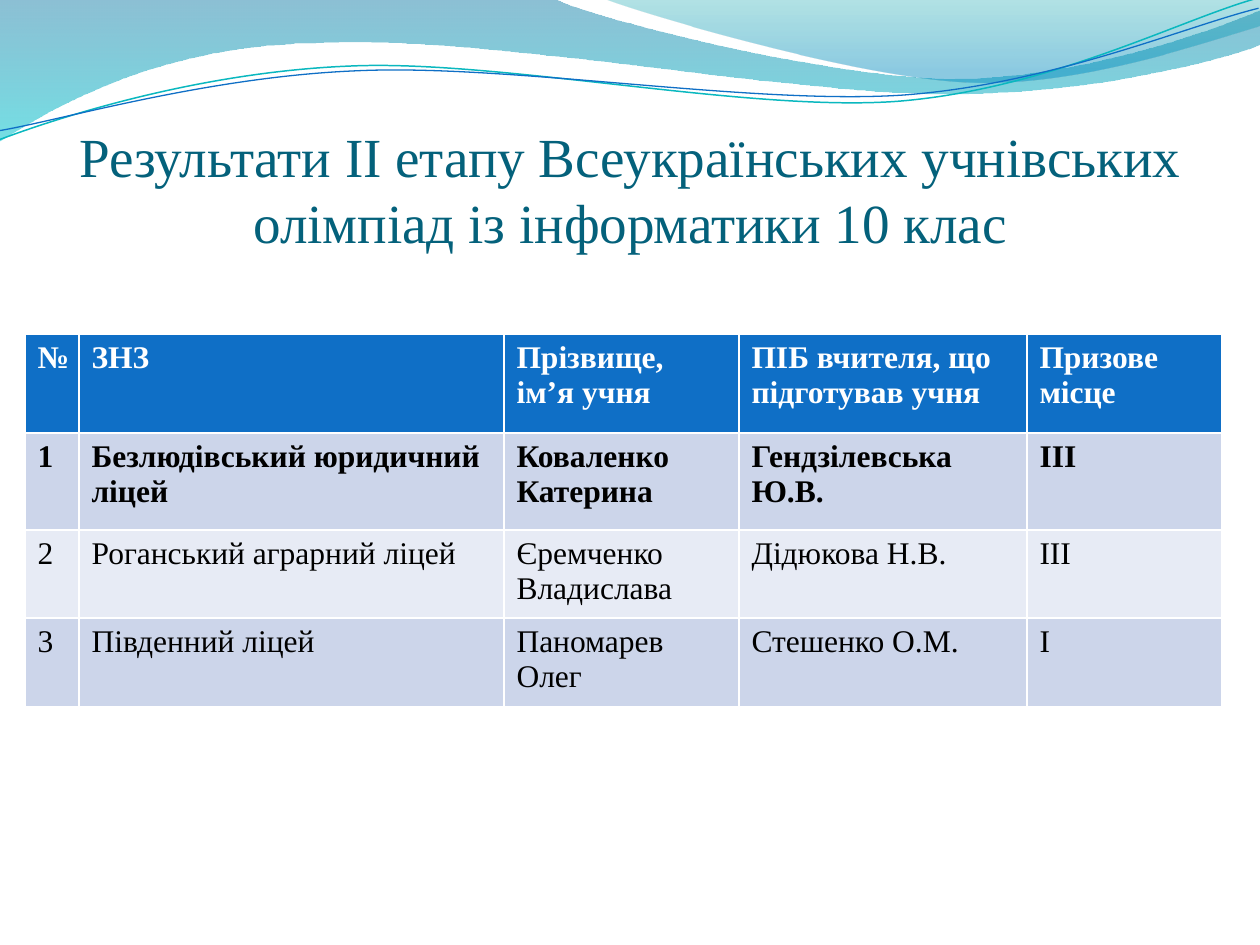
from dataclasses import dataclass

from lxml.etree import SubElement
from pptx import Presentation
from pptx.dml.color import RGBColor as Rgb
from pptx.enum.text import MSO_ANCHOR as Anchor, PP_ALIGN as Align
from pptx.oxml.ns import qn
from pptx.util import Pt

SCALE = 914400 / 126


@dataclass(frozen=True)
class Theme:
    """Colours and type sizes of the deck."""
    font: str = "Times New Roman"
    title_size: float = 31.5
    table_size: float = 18
    title: str = "04617B"
    header: str = "0F6FC6"
    bands: tuple = ("CCD5EA", "E7EBF5")
    white: str = "FFFFFF"
    black: str = "000000"
    wide_wave: tuple = ((0, "0074A1", 45), (1, "00C6CF", 55))
    right_wave: tuple = ((0, "00A1A9", 30), (0.8, "008BBF", 45))
    teal_line: str = "0AB8BF"
    blue_line: str = "0F6FC6"


@dataclass(frozen=True)
class Box:
    """A region in px."""
    left: int
    top: int
    width: int
    height: int

    def emu(self):
        """Return the region in EMU."""
        return [emu(side) for side in (self.left, self.top, self.width, self.height)]

    def inner(self, left, top, width, height):
        """Return a region placed relative to this one."""
        return Box(self.left + left, self.top + top, width, height)


THEME = Theme()
LINE_ANGLE = 357.3

WIDE_WAVE = [(1, 0), (555, 0),
             (601, 22, 838, 80, 956, 80), (1076, 80, 1208, 34, 1261, 12),
             (1262, 46),
             (1240, 56, 1097, 97, 941, 95), (784, 95, 482, 36, 325, 44),
             (164, 45, 59, 106, 0, 143)]
RIGHT_WAVE = [(0, 0), (37, 15, 255, 79, 365, 83),
              (475, 88, 607, 41, 656, 27), (656, 1)]
TEAL_LINE = [(0, 82), (62, 62, 203, 24, 353, 25),
             (502, 25, 748, 90, 899, 86), (1052, 81, 1187, 17, 1263, 0)]
BLUE_LINE = [(0, 63), (60, 56, 210, 19, 360, 20),
             (512, 20, 753, 73, 905, 70), (1055, 66, 1192, 14, 1264, 0)]

TITLE = "Результати ІІ етапу Всеукраїнських учнівських олімпіад із інформатики 10 клас"
COLUMN_WIDTHS = [54, 425, 235, 288, 195]
ROW_HEIGHTS = [99, 97, 53, 53]
RESULTS = [
    ("№", "ЗНЗ", "Прізвище, ім’я учня", "ПІБ вчителя, що підготував учня", "Призове місце"),
    ("1", "Безлюдівський юридичний ліцей", "Коваленко Катерина", "Гендзілевська Ю.В.", "ІІІ"),
    ("2", "Роганський аграрний ліцей", "Єремченко Владислава", "Дідюкова Н.В.", "ІІІ"),
    ("3", "Південний ліцей", "Паномарев Олег", "Стешенко О.М.", "І"),
]


def emu(px):
    """Convert px to EMU."""
    return round(px * SCALE)


def add_outline(page, box, outline, closed):
    """Draw a freeform of straight and cubic steps relative to the box."""
    anchors = [(emu(step[-2]), emu(step[-1])) for step in outline]
    builder = page.shapes.build_freeform(*anchors[0])
    builder.add_line_segments(anchors[1:], close=closed)
    shape = builder.convert_to_shape()
    shape.left, shape.top, shape.width, shape.height = box.emu()
    shape.shadow.inherit = False

    route = next(shape._element.iter(qn("a:path")))
    route.set("w", str(emu(box.width)))
    route.set("h", str(emu(box.height)))
    for command, step in zip(list(route), outline):
        for point in list(command):
            command.remove(point)
        if len(step) == 6:
            curve = SubElement(route, qn("a:cubicBezTo"))
            route.replace(command, curve)
            command = curve
        for x, y in zip(step[::2], step[1::2]):
            SubElement(command, qn("a:pt"), x=str(emu(x)), y=str(emu(y)))
    return shape


def add_wave(page, box, outline, stops):
    """Draw a wave with a translucent gradient running downwards."""
    shape = add_outline(page, box, outline, True)
    shape.line.fill.background()
    shape.fill.gradient()
    shape.fill.gradient_angle = 270
    for stop, (position, colour, opacity) in zip(shape.fill.gradient_stops, stops):
        stop.position = position
        stop.color.rgb = Rgb.from_string(colour)
    colours = shape.fill._xPr.iter(qn("a:srgbClr"))
    for element, (position, colour, opacity) in zip(colours, stops):
        SubElement(element, qn("a:alpha"), val=str(opacity * 1000))


def add_line(page, box, outline, colour, width):
    """Draw a tilted curved line with its width in points."""
    shape = add_outline(page, box, outline, False)
    shape.rotation = LINE_ANGLE
    shape.fill.background()
    shape.line.color.rgb = Rgb.from_string(colour)
    shape.line.width = Pt(width)


def add_header_art(page, box):
    """Draw the waves and the two lines along the top."""
    add_wave(page, box.inner(-1, -1, 1262, 144), WIDE_WAVE, THEME.wide_wave)
    add_wave(page, box.inner(604, -1, 656, 88), RIGHT_WAVE, THEME.right_wave)
    add_line(page, box.inner(-3, 28, 1263, 89), TEAL_LINE, THEME.teal_line, 0.85)
    add_line(page, box.inner(-3, 38, 1264, 73), BLUE_LINE, THEME.blue_line, 0.75)


def style_text(frame, size, colour, bold=False):
    """Format every run of a text frame."""
    for para in frame.paragraphs:
        for span in para.runs:
            span.font.name = THEME.font
            span.font.size = Pt(size)
            span.font.bold = bold
            span.font.color.rgb = Rgb.from_string(colour)


def add_title(page, box):
    """Place the centred title at the bottom of its box."""
    frame = page.shapes.add_textbox(*box.emu()).text_frame
    frame.word_wrap = True
    frame.vertical_anchor = Anchor.BOTTOM
    frame.margin_left = frame.margin_right = frame.margin_bottom = 0
    frame.text = TITLE
    frame.paragraphs[0].alignment = Align.CENTER
    style_text(frame, THEME.title_size, THEME.title)


def add_results(page, box):
    """Place the table of results."""
    holder = page.shapes.add_table(len(RESULTS), len(COLUMN_WIDTHS), *box.emu())
    table = holder.table
    for column, width in zip(table.columns, COLUMN_WIDTHS):
        column.width = emu(width)
    for number, (row, height, texts) in enumerate(zip(table.rows, ROW_HEIGHTS, RESULTS)):
        row.height = emu(height)
        is_header = number == 0
        background = THEME.header if is_header else THEME.bands[(number - 1) % 2]
        for cell, text in zip(row.cells, texts):
            cell.fill.solid()
            cell.fill.fore_color.rgb = Rgb.from_string(background)
            cell.text_frame.text = text
            style_text(cell.text_frame, THEME.table_size,
                       THEME.white if is_header else THEME.black, number < 2)
    holder.height = emu(box.height)


def main():
    """Build the deck and save it."""
    deck = Presentation()
    deck.slide_width, deck.slide_height = emu(1260), emu(945)
    page = deck.slides.add_slide(deck.slide_layouts[6])
    add_header_art(page, Box(0, 0, 1260, 142))
    add_title(page, Box(63, 97, 1134, 158))
    add_results(page, Box(25, 334, sum(COLUMN_WIDTHS), 373))
    deck.save("out.pptx")


if __name__ == "__main__":
    main()
